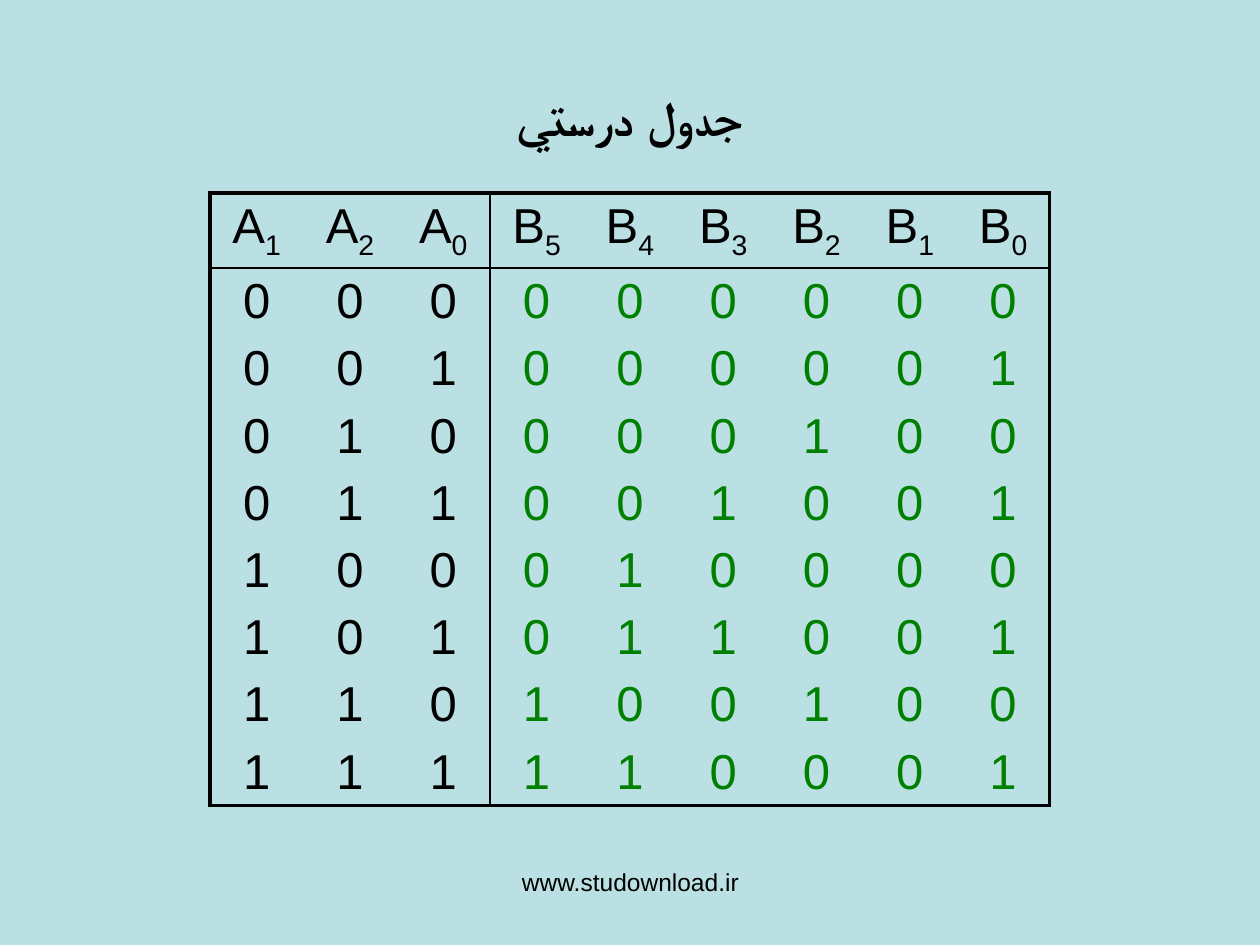
import pptx
import pptx.dml.color
import pptx.enum.text
import pptx.oxml
import pptx.oxml.ns
import pptx.util

PX = 914400 // 126
FONT = "Arial"
COLORS = {"page": "BBE0E3", "ink": "000000", "output": "008000"}
INPUTS = ["A1", "A2", "A0"]
OUTPUTS = ["B5", "B4", "B3", "B2", "B1", "B0"]
ROWS = [
    "000000000",
    "001000001",
    "010000100",
    "011001001",
    "100010000",
    "101011001",
    "110100100",
    "111110001",
]
OUTER, INNER = 2.25, 1
HEADER_HEIGHT = 75


def px(*lengths):
    return [pptx.util.Emu(length * PX) for length in lengths]


def rgb(name):
    return pptx.dml.color.RGBColor.from_string(COLORS[name])


def style(para, size, color="ink", bold=False):
    para.alignment = pptx.enum.text.PP_ALIGN.CENTER
    for span in para.runs:
        span.font.name = FONT
        span.font.size = pptx.util.Pt(size)
        span.font.bold = bold
        span.font.color.rgb = rgb(color)
        # Arabic script takes its font from the complex-script setting
        span._r.get_or_add_rPr().append(pptx.oxml.parse_xml(
            f'<a:cs {pptx.oxml.ns.nsdecls("a")} typeface="{FONT}"/>'))


def add_text(page, box, text, size, anchor, bold=False):
    frame = page.shapes.add_textbox(*px(*box)).text_frame
    frame.word_wrap = True
    frame.vertical_anchor = anchor
    frame.text = text
    style(frame.paragraphs[0], size, bold=bold)


def set_borders(cell, widths):
    """Draw the left, right, top and bottom edges; width 0 means no line."""
    properties = cell._tc.get_or_add_tcPr()
    for side, width in zip("LRTB", widths):
        fill = (f'<a:solidFill><a:srgbClr val="{COLORS["ink"]}"/></a:solidFill>'
                if width else "<a:noFill/>")
        properties.append(pptx.oxml.parse_xml(
            f'<a:ln{side} {pptx.oxml.ns.nsdecls("a")} w="{int(width * 12700)}">'
            f"{fill}</a:ln{side}>"))


def add_truth_table(page, box):
    left, top, width, height = box
    header = INPUTS + OUTPUTS
    split, columns, rows = len(INPUTS), len(header), len(ROWS) + 1
    table = page.shapes.add_table(rows, columns, *px(*box)).table
    table.first_row = table.horz_banding = False

    # Equal columns; the header is taller to hold its subscripts
    for column in table.columns:
        column.width = width * PX // columns
    for row in table.rows:
        row.height = (height - HEADER_HEIGHT) * PX // len(ROWS)
    table.rows[0].height = HEADER_HEIGHT * PX

    for r, values in enumerate([header, *ROWS]):
        for c, value in enumerate(values):
            cell = table.cell(r, c)
            cell.vertical_anchor = pptx.enum.text.MSO_ANCHOR.MIDDLE
            cell.margin_top, cell.margin_bottom = px(4, 4)
            para = cell.text_frame.paragraphs[0]
            para.text = value[0]
            if r == 0:
                subscript = para.add_run()
                subscript.text = value[1]
                subscript._r.get_or_add_rPr().set("baseline", "-25000")
            style(para, 28, "output" if r and c >= split else "ink")

            # Heavy frame, thin rules below the header and between the groups
            set_borders(cell, (
                {0: OUTER, split: INNER}.get(c, 0),
                {columns - 1: OUTER, split - 1: INNER}.get(c, 0),
                {0: OUTER, 1: INNER}.get(r, 0),
                {rows - 1: OUTER, 0: INNER}.get(r, 0),
            ))
            cell.fill.background()


def main():
    deck = pptx.Presentation()
    deck.slide_width, deck.slide_height = px(1260, 945)
    page = deck.slides.add_slide(deck.slide_layouts[6])
    page.background.fill.solid()
    page.background.fill.fore_color.rgb = rgb("page")

    anchors = pptx.enum.text.MSO_ANCHOR
    # Title
    add_text(page, (63, 38, 1134, 157), "جدول درستي", 28, anchors.MIDDLE, bold=True)
    # Truth table
    add_truth_table(page, (210, 193, 840, 613))
    # Footer address
    add_text(page, (431, 861, 399, 65), "www.studownload.ir", 14, anchors.TOP)

    deck.save("out.pptx")


if __name__ == "__main__":
    main()
